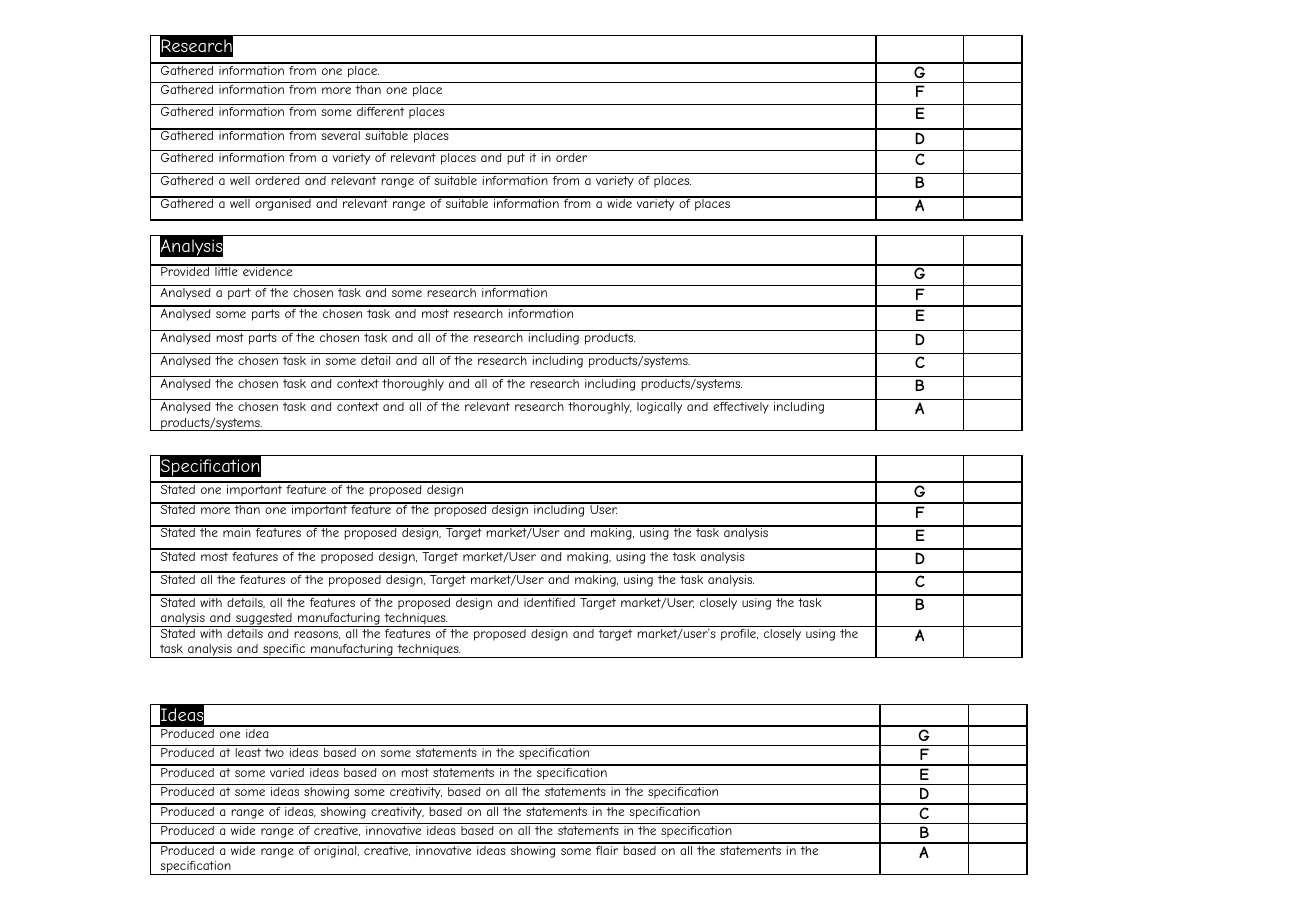
from lxml.etree import SubElement
from pptx import Presentation
from pptx.dml.color import RGBColor
from pptx.enum.text import PP_ALIGN as Align
from pptx.oxml import parse_xml
from pptx.oxml.ns import nsdecls, qn
from pptx.util import Inches, Pt

# The page is a grid of 1083 columns by 750 rows
UNIT = Inches(0.01)
PAGE_COLUMNS, PAGE_ROWS = 1083, 750
LEFT = 124
FONT = "Comic Neue"
BLACK, WHITE = "000000", "FFFFFF"
GRADES = "GFEDCBA"
HEADING = {"size": Pt(11), "name": FONT}
STATEMENT = {"size": Pt(8), "name": FONT}
GRADE = {"size": Pt(10), "name": FONT, "bold": True}
MARGINS = {"margin_left": 8 * UNIT, "margin_right": 8 * UNIT,
           "margin_top": 0, "margin_bottom": 0}

# Each section: title, top row, column widths, row heights, statements from G to A
SECTIONS = [
    ("Research", 29, (597, 72, 48), (23, 16, 18, 20, 18, 19, 19, 19), [
        "Gathered information from one place.",
        "Gathered information from more than one place",
        "Gathered information from some different places",
        "Gathered information from several suitable places",
        "Gathered information from a variety of relevant places and put it in order",
        "Gathered a well ordered and relevant range of suitable information "
        "from a variety of places.",
        "Gathered a well organised and relevant range of suitable information "
        "from a wide variety of places",
    ]),
    ("Analysis", 194, (597, 72, 48), (24, 17, 17, 20, 19, 19, 19, 25), [
        "Provided little evidence",
        "Analysed a part of the chosen task and some research information",
        "Analysed some parts of the chosen task and most research information",
        "Analysed most parts of the chosen task and all of the research including products.",
        "Analysed the chosen task in some detail and all of the research "
        "including products/systems.",
        "Analysed the chosen task and context thoroughly and all of the research "
        "including products/systems.",
        "Analysed the chosen task and context and all of the relevant research "
        "thoroughly, logically and effectively including products/systems.",
    ]),
    ("Specification", 375, (597, 72, 48), (22, 17, 19, 19, 19, 19, 25, 25), [
        "Stated one important feature of the proposed design",
        "Stated more than one important feature of the proposed design including User.",
        "Stated the main features of the proposed design, Target market/User and making, "
        "using the task analysis",
        "Stated most features of the proposed design, Target market/User and making, "
        "using the task analysis",
        "Stated all the features of the proposed design, Target market/User and making, "
        "using the task analysis.",
        "Stated with details, all the features of the proposed design and identified "
        "Target market/User, closely using the task analysis and suggested "
        "manufacturing techniques.",
        "Stated with details and reasons, all the features of the proposed design and "
        "target market/user’s profile, closely using the task analysis and specific "
        "manufacturing techniques.",
    ]),
    ("Ideas", 580, (600, 73, 48), (17, 16, 16, 16, 16, 16, 16, 26), [
        "Produced one idea",
        "Produced at least two ideas based on some statements in the specification",
        "Produced at some varied ideas based on most statements in the specification",
        "Produced at some ideas showing some creativity, based on all the statements "
        "in the specification",
        "Produced a range of ideas, showing creativity, based on all the statements "
        "in the specification",
        "Produced a wide range of creative, innovative ideas based on all the statements "
        "in the specification",
        "Produced a wide range of original, creative, innovative ideas showing some flair "
        "based on all the statements in the specification",
    ]),
]


def color(value):
    return RGBColor.from_string(value)


def set_all(target, values):
    for name, value in values.items():
        setattr(target, name, value)


def frame_cell(cell):
    """Clear the fill, set the margins and draw the four borders."""
    cell.fill.background()
    set_all(cell, MARGINS)
    properties = cell._tc.get_or_add_tcPr()
    for index, side in enumerate("LRTB"):
        properties.insert(index, parse_xml(
            f'<a:ln{side} {nsdecls("a")} w="{Pt(1)}"><a:solidFill>'
            f'<a:srgbClr val="{BLACK}"/></a:solidFill></a:ln{side}>'))


def highlight(span, value):
    mark = parse_xml(f'<a:highlight {nsdecls("a")}><a:srgbClr val="{value}"/></a:highlight>')
    span._r.rPr.find(qn("a:solidFill")).addnext(mark)


def fill_cell(cell, text, style, ink=BLACK, align=Align.LEFT, marker=None):
    frame_cell(cell)
    para = cell.text_frame.paragraphs[0]
    para.alignment = align
    if not text:
        # Small type keeps empty cells from stretching the row
        SubElement(para._p, qn("a:endParaRPr"), sz="800")
        return
    span = para.add_run()
    span.text = text
    set_all(span.font, style)
    span.font.color.rgb = color(ink)
    if marker:
        highlight(span, marker)


def add_section(page, left, top, title, widths, heights, statements):
    """Draw one grading table with its top left corner at the given grid point."""
    frame = page.shapes.add_table(
        len(heights), len(widths), left * UNIT, top * UNIT,
        sum(widths) * UNIT, sum(heights) * UNIT)
    table = frame.table
    set_all(table, {"first_row": False, "horz_banding": False})
    for column, width in zip(table.columns, widths):
        column.width = width * UNIT
    for row, height in zip(table.rows, heights):
        row.height = height * UNIT

    # Heading row
    fill_cell(table.cell(0, 0), title, HEADING, WHITE, marker=BLACK)
    fill_cell(table.cell(0, 1), "", GRADE)

    # Statements and their grades
    for row, (statement, grade) in enumerate(zip(statements, GRADES), start=1):
        fill_cell(table.cell(row, 0), statement, STATEMENT)
        fill_cell(table.cell(row, 1), grade, GRADE, align=Align.CENTER)

    # Blank column for ticks
    for row in range(len(heights)):
        fill_cell(table.cell(row, 2), "", STATEMENT)


def main():
    deck = Presentation()
    set_all(deck, {"slide_width": PAGE_COLUMNS * UNIT, "slide_height": PAGE_ROWS * UNIT})
    page = deck.slides.add_slide(deck.slide_layouts[6])
    for title, top, widths, heights, statements in SECTIONS:
        add_section(page, LEFT, top, title, widths, heights, statements)
    deck.save("out.pptx")


if __name__ == "__main__":
    main()
